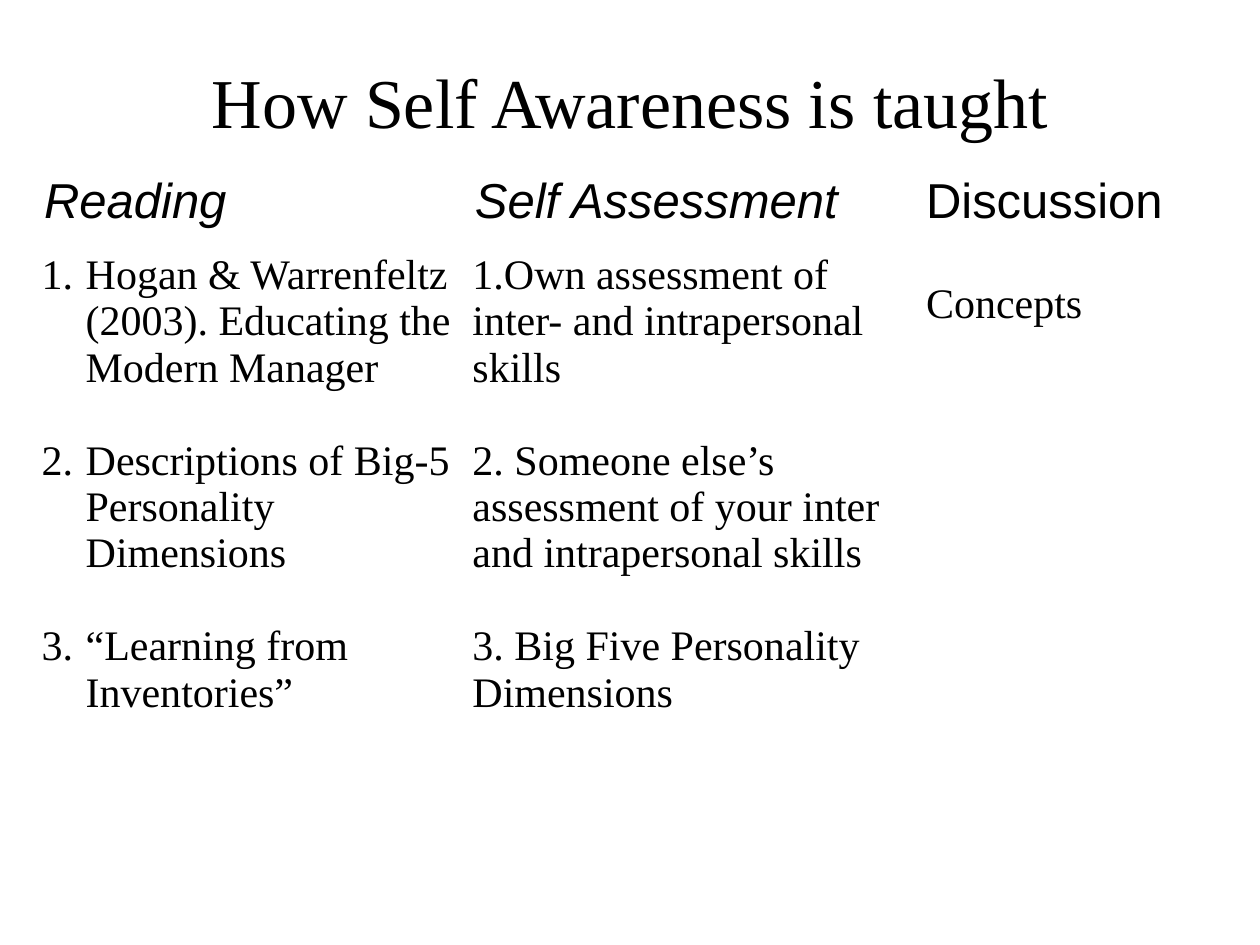
from pptx import Presentation
from pptx.dml.color import RGBColor
from pptx.enum.text import MSO_ANCHOR, PP_ALIGN
from pptx.oxml.ns import qn
from pptx.util import Inches, Pt
from lxml.etree import SubElement

THEME = {
    "ink": RGBColor(0, 0, 0),
    "title": {"name": "Times New Roman", "size": Pt(40)},
    "heading": {"name": "Arial", "size": Pt(28), "italic": True, "bold": False},
    "plain_heading": {"name": "Arial", "size": Pt(28), "italic": False, "bold": False},
    "body": {"name": "Times New Roman", "size": Pt(24), "italic": False, "bold": False},
    "item_gap": Pt(26.5),
}


def write(para, text, style):
    span = para.add_run()
    span.text = text
    for name, value in THEME[style].items():
        setattr(span.font, name, value)
    span.font.color.rgb = THEME["ink"]


def hang(para, margin, numbered):
    """Give a paragraph a hanging indent, a tab stop and, if asked, a number."""
    props = para._p.get_or_add_pPr()
    props.set("marL", str(Inches(margin)))
    props.set("indent", str(Inches(-0.38)))
    if numbered:
        SubElement(props, qn("a:buAutoNum"), type="arabicPeriod")
    tabs = SubElement(props, qn("a:tabLst"))
    SubElement(tabs, qn("a:tab"), pos=str(Inches(0.25)), algn="l")


deck = Presentation()
deck.slide_width, deck.slide_height = Inches(10), Inches(7.5)
page = deck.slides.add_slide(deck.slide_layouts[5])

# Title
title = page.shapes.title
title.left, title.top = Inches(0.75), Inches(0.17)
title.width, title.height = Inches(8.5), Inches(1.25)
title.text_frame.vertical_anchor = MSO_ANCHOR.MIDDLE
title_para = title.text_frame.paragraphs[0]
title_para.alignment = PP_ALIGN.CENTER
write(title_para, "How Self Awareness is taught", "title")

# Teaching methods: heading, heading style, width, items, hanging margin, numbered
METHODS = [
    ("Reading", "heading", 3.42, [
        "Hogan & Warrenfeltz (2003). Educating the Modern Manager",
        "Descriptions of Big-5 Personality Dimensions",
        "“Learning from Inventories”",
    ], 0.35, True),
    ("Self Assessment", "heading", 3.58, [
        "1.Own assessment of inter- and intrapersonal skills",
        "2. Someone else’s assessment of your inter and intrapersonal skills",
        "3. Big Five Personality Dimensions",
    ], None, False),
    ("Discussion", "plain_heading", 2.45, ["Concepts"], 0.38, False),
]

# Table without style banding
table = page.shapes.add_table(
    2, len(METHODS), Inches(0.25), Inches(1.33), Inches(9.45), Inches(5.85)
).table
table.first_row = table.horz_banding = False
for row, height in zip(table.rows, (0.67, 5.18)):
    row.height = Inches(height)
for cell in table.iter_cells():
    cell.fill.background()

for col, (heading, style, width, items, margin, numbered) in enumerate(METHODS):
    table.columns[col].width = Inches(width)
    write(table.cell(0, col).text_frame.paragraphs[0], heading, style)

    cell = table.cell(1, col)
    frame = cell.text_frame
    for index, item in enumerate(items):
        para = frame.add_paragraph() if index else frame.paragraphs[0]
        if margin:
            hang(para, margin, numbered)
        if index:
            para.space_before = THEME["item_gap"]
        write(para, item, "body")

    # The lists sit tight in their cells; the lone concept line is set wider
    if len(items) > 1:
        cell.margin_left = cell.margin_right = Inches(0.08)
        cell.margin_top = cell.margin_bottom = Inches(0)
    else:
        frame.paragraphs[0].line_spacing = 1.5

deck.save("out.pptx")
